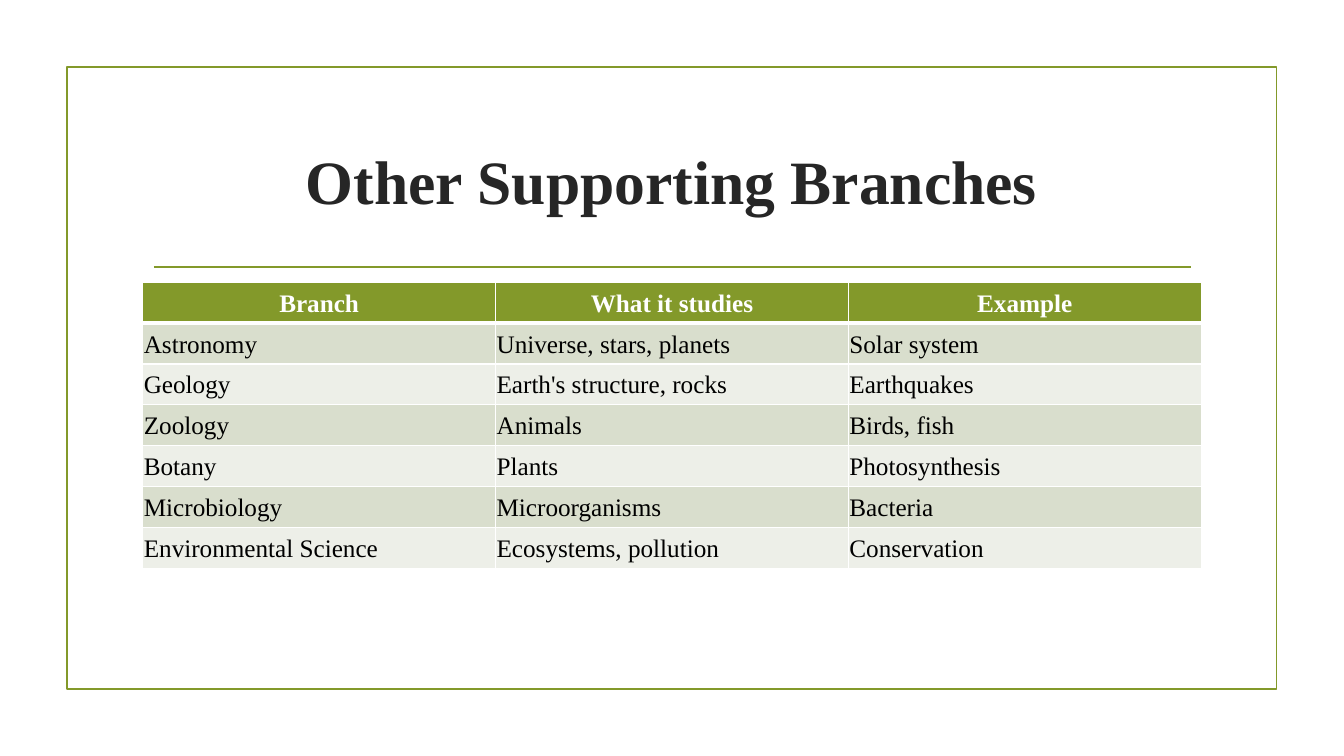
from lxml import etree
from pptx import Presentation
from pptx import util as u
from pptx.dml.color import RGBColor
from pptx.enum import shapes, text
from pptx.oxml import ns

FONT = "Times New Roman"
GREEN = "83992A"
WHITE = "FFFFFF"
BANDS = ["D9DECD", "EDEFE8"]
ROW_HEIGHT = 29.2
COLUMN_WIDTH = 252
BRANCHES = [
    ["Branch", "What it studies", "Example"],
    ["Astronomy", "Universe, stars, planets", "Solar system"],
    ["Geology", "Earth's structure, rocks", "Earthquakes"],
    ["Zoology", "Animals", "Birds, fish"],
    ["Botany", "Plants", "Photosynthesis"],
    ["Microbiology", "Microorganisms", "Bacteria"],
    ["Environmental Science", "Ecosystems, pollution", "Conservation"],
]


def color(value):
    return RGBColor.from_string(value)


def format_paragraph(paragraph, size, value, bold, align):
    paragraph.alignment = align
    font = paragraph.font
    font.name = FONT
    font.size = u.Pt(size)
    font.bold = bold
    font.color.rgb = color(value)


def style_line(line):
    line.color.rgb = color(GREEN)
    line.width = u.Pt(1.25)


def add_frame(slide, left, top, width, height):
    frame = slide.shapes.add_shape(
        shapes.MSO_SHAPE.RECTANGLE, u.Pt(left), u.Pt(top), u.Pt(width), u.Pt(height))
    frame.shadow.inherit = False
    frame.fill.background()
    style_line(frame.line)


def add_rule(slide, left, right, top):
    rule = slide.shapes.add_connector(
        shapes.MSO_CONNECTOR.STRAIGHT, u.Pt(left), u.Pt(top), u.Pt(right), u.Pt(top))
    style_line(rule.line)
    etree.SubElement(rule._element.spPr, ns.qn("a:effectLst"))


def set_title(slide, wording, left, top, width, height):
    title = slide.shapes.title
    title.left, title.top = u.Pt(left), u.Pt(top)
    title.width, title.height = u.Pt(width), u.Pt(height)
    frame = title.text_frame
    frame.text = wording
    frame.word_wrap = True
    frame.vertical_anchor = text.MSO_ANCHOR.MIDDLE
    format_paragraph(frame.paragraphs[0], 44, "262626", True, text.PP_ALIGN.CENTER)


def set_borders(cell, widths):
    properties = cell._tc.get_or_add_tcPr()
    for index, (side, width) in enumerate(widths.items()):
        border = etree.Element(ns.qn(f"a:ln{side}"), w=str(u.Pt(width)))
        fill = etree.SubElement(border, ns.qn("a:solidFill"))
        etree.SubElement(fill, ns.qn("a:srgbClr"), val=WHITE)
        properties.insert(index, border)


def fill_cell(cell, wording, row):
    header = row == 0
    cell.text = wording
    cell.vertical_anchor = text.MSO_ANCHOR.MIDDLE
    cell.margin_left = cell.margin_right = u.Pt(0.75)
    cell.margin_top = cell.margin_bottom = u.Pt(0.75)
    cell.fill.solid()
    cell.fill.fore_color.rgb = color(GREEN if header else BANDS[(row - 1) % 2])
    paragraph = cell.text_frame.paragraphs[0]
    paragraph.line_spacing = 1.07
    align = text.PP_ALIGN.CENTER if header else text.PP_ALIGN.LEFT
    format_paragraph(paragraph, 18, WHITE if header else "000000", header, align)
    set_borders(cell, {"L": 1, "R": 1, "T": 3 if row == 1 else 1, "B": 3 if header else 1})


def add_branch_table(slide, left, top):
    rows, columns = len(BRANCHES), len(BRANCHES[0])
    table = slide.shapes.add_table(
        rows, columns, u.Pt(left), u.Pt(top),
        u.Pt(COLUMN_WIDTH * columns), u.Pt(ROW_HEIGHT * rows)).table
    for column in table.columns:
        column.width = u.Pt(COLUMN_WIDTH)
    for row, wordings in enumerate(BRANCHES):
        table.rows[row].height = u.Pt(ROW_HEIGHT)
        for column, wording in enumerate(wordings):
            fill_cell(table.cell(row, column), wording, row)


def main():
    presentation = Presentation()
    presentation.slide_width = u.Pt(960)
    presentation.slide_height = u.Pt(540)
    slide = presentation.slides.add_slide(presentation.slide_layouts[5])
    add_frame(slide, 47.8, 48, 864, 444)
    add_rule(slide, 110, 850.5, 190.8)
    set_title(slide, "Other Supporting Branches", 102, 77, 756, 103)
    add_branch_table(slide, 102, 201.6)
    presentation.save("out.pptx")


if __name__ == "__main__":
    main()
